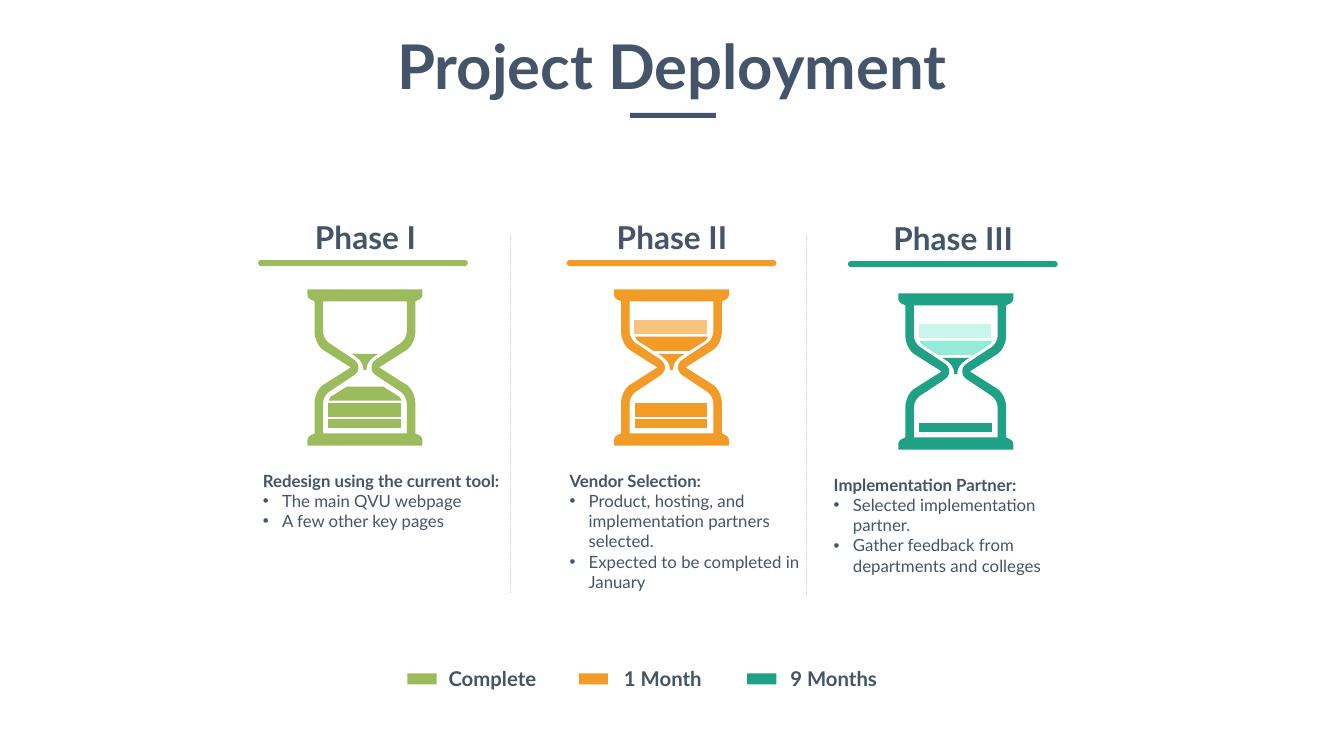
from dataclasses import dataclass

from lxml import etree
from pptx import Presentation
from pptx.dml.color import RGBColor
from pptx.enum.dml import MSO_LINE
from pptx.enum.shapes import MSO_CONNECTOR, MSO_SHAPE
from pptx.enum.text import PP_ALIGN
from pptx.oxml.ns import qn
from pptx.util import Inches, Pt

RECTANGLE = MSO_SHAPE.RECTANGLE
ROUNDED = MSO_SHAPE.ROUNDED_RECTANGLE
STRAIGHT = MSO_CONNECTOR.STRAIGHT
DOTTED = MSO_LINE.ROUND_DOT
LEFT, CENTER = PP_ALIGN.LEFT, PP_ALIGN.CENTER
CELL = Inches(0.1)
GLASS_WIDTH, GLASS_HEIGHT = 11.4, 15.5


@dataclass(frozen=True)
class Theme:
    font: str = "Lato"
    ink: str = "445469"
    divider: str = "D9D9D9"
    green: str = "9BBB5C"
    orange: str = "F29B26"
    pale_orange: str = "F7C37D"
    teal: str = "1EA185"
    light_teal: str = "93EBD8"
    pale_teal: str = "C9F5EC"
    title_size: float = 44
    heading_size: float = 22.5
    legend_size: float = 14.5
    body_size: float = 12


THEME = Theme()


@dataclass(frozen=True)
class Phase:
    heading: str
    color: str
    heading_at: tuple
    rule_at: tuple
    glass_at: tuple
    body_at: tuple
    body_width: float
    lead: str
    bullets: tuple
    sand: tuple


PHASES = (
    Phase("Phase I", THEME.green, (20.2, 21.1), (25.6, 25.8), (30.5, 28.7), (25.1, 46.2), 25.6,
          "Redesign using the current tool:",
          ("The main QVU webpage", "A few other key pages"),
          (("neck", THEME.green), ("mound", THEME.green),
           ("lower band", THEME.green), ("base", THEME.green))),
    Phase("Phase II", THEME.orange, (50.6, 21.1), (56.2, 25.8), (60.9, 28.7), (55.5, 46.2), 26.1,
          "Vendor Selection:",
          ("Product, hosting, and implementation partners selected.",
           "Expected to be completed in January"),
          (("upper band", THEME.pale_orange), ("bowl", THEME.orange), ("neck", THEME.orange),
           ("lower band", THEME.orange), ("base", THEME.orange))),
    Phase("Phase III", THEME.teal, (78.5, 21.2), (84.1, 25.9), (89.1, 29.1), (81.7, 46.6), 27.8,
          "Implementation Partner:",
          ("Selected implementation partner.", "Gather feedback from departments and colleges"),
          (("upper band", THEME.pale_teal), ("bowl", THEME.light_teal), ("neck", THEME.teal),
           ("base", THEME.teal))),
)
LEGEND = (
    ("Complete", THEME.green, 40.4, 43.5),
    ("1 Month", THEME.orange, 57.4, 60.9),
    ("9 Months", THEME.teal, 74.1, 77.4),
)
DIVIDERS = ((50.6, 58.8), (80, 59.1))


def cells(count):
    return round(count * CELL)


def curve(start, first, second, end, steps=8):
    def point(t):
        weights = ((1 - t) ** 3, 3 * t * (1 - t) ** 2, 3 * t * t * (1 - t), t ** 3)
        return tuple(sum(weight * knot[axis] for weight, knot in
                         zip(weights, (start, first, second, end))) for axis in (0, 1))
    return [point(step / steps) for step in range(steps + 1)]


def mirror_across(points):
    return points + [(GLASS_WIDTH - x, y) for x, y in reversed(points)]


def mirror_both(points):
    return mirror_across(points + [(x, GLASS_HEIGHT - y) for x, y in reversed(points)])


def block(left, top, width, height):
    return [(left, top), (left + width, top), (left + width, top + height), (left, top + height)]


OUTER_WALL = mirror_both(
    [(0, 0)] + curve((0, 0.5), (0, 0.8), (0.2, 1), (0.5, 1.1)) + [(0.7, 1.2)]
    + curve((0.7, 4.2), (0.7, 4.9), (1.1, 5.8), (1.7, 6.1)) + [(4.3, 7.75)])
INNER_WALL = mirror_both(
    [(1.55, 1.2)] + curve((1.55, 4.2), (1.55, 4.7), (1.9, 5.2), (2.25, 5.4))
    + curve((4.5, 6.9), (4.85, 7.1), (5.05, 7.4), (5.05, 7.75)))
BOWL = mirror_across([(3.9, 6.1)] + curve((2.4, 5.15), (2.3, 5.1), (2.15, 4.9), (2.1, 4.7)))
SAND = {
    "upper band": block(2, 3, 7.2, 1.4),
    "bowl": BOWL,
    "neck": mirror_across([(4.35, 6.4)] + curve((4.75, 6.65), (5.25, 7), (5.55, 7.45), (5.55, 8))),
    "mound": [(x, 15.75 - y) for x, y in BOWL],
    "lower band": block(2.05, 11.3, 7.2, 1.4),
    "base": block(2.05, 12.9, 7.2, 0.9),
}


def paint(shape, color):
    shape.shadow.inherit = False
    shape.fill.solid()
    shape.fill.fore_color.rgb = RGBColor.from_string(color)
    shape.line.fill.background()


def add_bar(slide, left, top, width, height, color, kind=RECTANGLE):
    shape = slide.shapes.add_shape(kind, *map(cells, (left, top, width, height)))
    paint(shape, color)
    if kind == ROUNDED:
        shape.adjustments[0] = 0.5


def add_outline(slide, origin, contours, color):
    placed = [[(cells(origin[0] + x), cells(origin[1] + y)) for x, y in contour]
              for contour in contours]
    builder = slide.shapes.build_freeform(*placed[0][0], scale=1.0)
    for index, contour in enumerate(placed):
        if index:
            builder.move_to(*contour[0])
        builder.add_line_segments(contour[1:], close=True)
    paint(builder.convert_to_shape(), color)


def style(paragraph, size, bold=True, alignment=LEFT):
    paragraph.alignment = alignment
    paragraph.font.name = THEME.font
    paragraph.font.size = Pt(size)
    paragraph.font.bold = bold
    paragraph.font.color.rgb = RGBColor.from_string(THEME.ink)


def add_text(slide, left, top, width, height, text, size, alignment=LEFT):
    frame = slide.shapes.add_textbox(*map(cells, (left, top, width, height))).text_frame
    frame.word_wrap = True
    frame.text = text
    style(frame.paragraphs[0], size, alignment=alignment)
    return frame


def add_bullet(frame, text):
    paragraph = frame.add_paragraph()
    paragraph.text = text
    style(paragraph, THEME.body_size, bold=False)
    properties = paragraph._p.get_or_add_pPr()
    properties.set("marL", str(Inches(0.19)))
    properties.set("indent", str(-Inches(0.19)))
    etree.SubElement(properties, qn("a:buFont")).set("typeface", "Arial")
    etree.SubElement(properties, qn("a:buChar")).set("char", "•")


def add_divider(slide, left, bottom):
    x = cells(left)
    connector = slide.shapes.add_connector(STRAIGHT, x, cells(23.3), x, cells(bottom))
    connector.line.color.rgb = RGBColor.from_string(THEME.divider)
    connector.line.width = Pt(0.5)
    connector.line.dash_style = DOTTED
    etree.SubElement(connector._element.spPr, qn("a:effectLst"))


def add_title(slide, text):
    frame = add_text(slide, 9.4, 2.6, 114.5, 7.9, text, THEME.title_size, CENTER)
    frame.margin_left = frame.margin_right = Inches(0.05)
    frame.margin_top = frame.margin_bottom = Inches(0.02)
    add_bar(slide, 62.5, 11.2, 8.5, 0.5, THEME.ink)


def add_phase(slide, phase):
    add_text(slide, *phase.heading_at, 32.1, 4.8, phase.heading, THEME.heading_size, CENTER)
    add_bar(slide, *phase.rule_at, 20.8, 0.6, phase.color, ROUNDED)
    add_outline(slide, phase.glass_at, (OUTER_WALL, INNER_WALL), phase.color)
    for part, color in phase.sand:
        add_outline(slide, phase.glass_at, (SAND[part],), color)
    body = add_text(slide, *phase.body_at, phase.body_width, 11.1, phase.lead, THEME.body_size)
    for bullet in phase.bullets:
        add_bullet(body, bullet)


def main():
    presentation = Presentation()
    presentation.slide_width, presentation.slide_height = Inches(13.33), Inches(7.5)
    slide = presentation.slides.add_slide(presentation.slide_layouts[6])
    add_title(slide, "Project Deployment")
    for left, bottom in DIVIDERS:
        add_divider(slide, left, bottom)
    for phase in PHASES:
        add_phase(slide, phase)
    for label, color, swatch_left, label_left in LEGEND:
        add_bar(slide, swatch_left, 66.8, 2.9, 1.1, color)
        add_text(slide, label_left, 65.6, 14.9, 3.5, label, THEME.legend_size)
    presentation.save("out.pptx")


if __name__ == "__main__":
    main()
